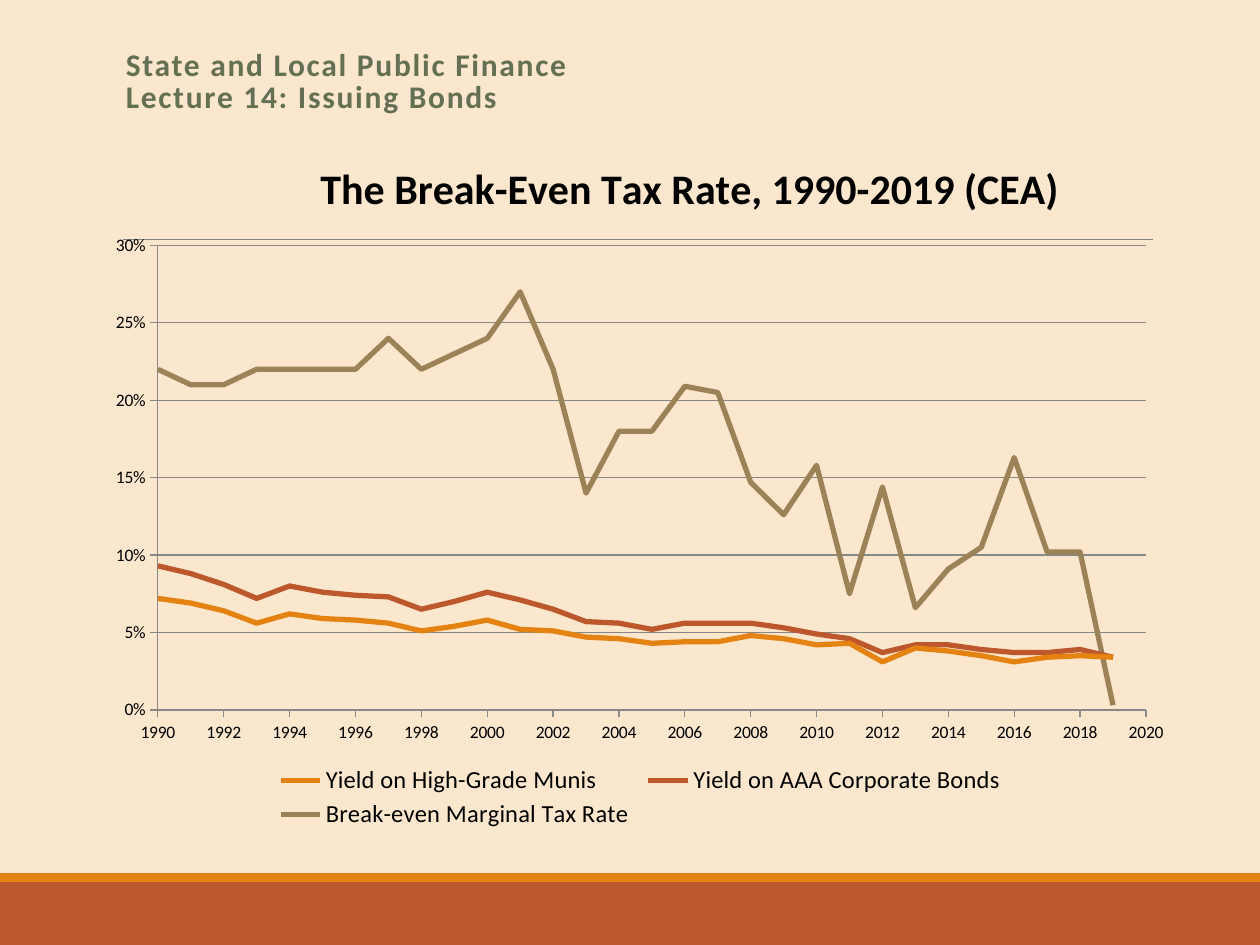
from dataclasses import dataclass

from lxml.etree import SubElement
from pptx import Presentation
from pptx.chart.data import XyChartData
from pptx.dml.color import RGBColor
from pptx.enum.chart import XL_CHART_TYPE, XL_LEGEND_POSITION, XL_TICK_MARK
from pptx.enum.shapes import MSO_CONNECTOR, MSO_SHAPE
from pptx.enum.text import MSO_ANCHOR
from pptx.oxml.ns import qn
from pptx.util import Pt


@dataclass(frozen=True)
class Theme:
    font: str = "Calibri"
    background: str = "FBE6CE"
    orange: str = "E48312"
    rust: str = "BD582C"
    tan: str = "9B8357"
    green: str = "637052"
    rule: str = "808080"
    axis: str = "878787"
    text: str = "000000"
    header_size: int = 18
    title_size: int = 24
    legend_size: int = 14
    axis_size: int = 10


THEME = Theme()
FIRST_YEAR = 1990
SERIES = [
    ("Yield on High-Grade Munis", THEME.orange, [
        0.072, 0.069, 0.064, 0.056, 0.062, 0.059, 0.058, 0.056, 0.051, 0.054,
        0.058, 0.052, 0.051, 0.047, 0.046, 0.043, 0.044, 0.044, 0.048, 0.046,
        0.042, 0.043, 0.031, 0.04, 0.038, 0.035, 0.031, 0.034, 0.035, 0.034]),
    ("Yield on AAA Corporate Bonds", THEME.rust, [
        0.093, 0.088, 0.081, 0.072, 0.08, 0.076, 0.074, 0.073, 0.065, 0.07,
        0.076, 0.071, 0.065, 0.057, 0.056, 0.052, 0.056, 0.056, 0.056, 0.053,
        0.049, 0.046, 0.037, 0.042, 0.042, 0.039, 0.037, 0.037, 0.039, 0.034]),
    ("Break-even Marginal Tax Rate", THEME.tan, [
        0.22, 0.21, 0.21, 0.22, 0.22, 0.22, 0.22, 0.24, 0.22, 0.23,
        0.24, 0.27, 0.22, 0.14, 0.18, 0.18, 0.209, 0.205, 0.147, 0.126,
        0.158, 0.075, 0.144, 0.066, 0.091, 0.105, 0.163, 0.102, 0.102, 0.003]),
]


def color(value):
    return RGBColor.from_string(value)


def format_font(font, size, fill=THEME.text, bold=False):
    font.name = THEME.font
    font.size = Pt(size)
    font.bold = bold
    font.color.rgb = color(fill)


def format_line(line, fill, width):
    line.color.rgb = color(fill)
    line.width = Pt(width)


def add_text(slide, text, left, top, width, height, *, size, fill,
             bold=False, line_spacing=1.0, letter_spacing=0):
    shape = slide.shapes.add_textbox(Pt(left), Pt(top), Pt(width), Pt(height))
    frame = shape.text_frame
    frame.word_wrap = True
    frame.vertical_anchor = MSO_ANCHOR.MIDDLE
    frame.text = text
    paragraph = frame.paragraphs[0]
    paragraph.line_spacing = line_spacing
    for run in paragraph.runs:
        format_font(run.font, size, fill, bold)
        run.font._element.set("spc", str(letter_spacing * 100))


def add_band(slide, top, height, fill):
    shape = slide.shapes.add_shape(
        MSO_SHAPE.RECTANGLE, Pt(0), Pt(top), Pt(720), Pt(height))
    shape.shadow.inherit = False
    shape.fill.solid()
    shape.fill.fore_color.rgb = color(fill)
    shape.line.fill.background()


def add_rule(slide, left, right, top):
    connector = slide.shapes.add_connector(
        MSO_CONNECTOR.STRAIGHT, Pt(left), Pt(top), Pt(right), Pt(top))
    format_line(connector.line, THEME.rule, 0.5)
    SubElement(connector._element.spPr, qn("a:effectLst"))


def place(element, index, **fractions):
    for existing in element.findall(qn("c:layout")):
        element.remove(existing)
    layout = SubElement(element, qn("c:layout"))
    element.insert(index, layout)
    manual = SubElement(layout, qn("c:manualLayout"))
    if element.tag == qn("c:plotArea"):
        SubElement(manual, qn("c:layoutTarget")).set("val", "inner")
    for mode in ("xMode", "yMode"):
        SubElement(manual, qn(f"c:{mode}")).set("val", "edge")
    for name, value in fractions.items():
        SubElement(manual, qn(f"c:{name}")).set("val", str(value))


def format_axis(axis, minimum, maximum, unit, number_format):
    axis.minimum_scale = minimum
    axis.maximum_scale = maximum
    axis.major_unit = unit
    axis.major_tick_mark = XL_TICK_MARK.OUTSIDE
    axis.minor_tick_mark = XL_TICK_MARK.NONE
    axis.tick_labels.number_format = number_format
    axis.tick_labels.number_format_is_linked = False
    format_font(axis.tick_labels.font, THEME.axis_size)
    format_line(axis.format.line, THEME.axis, 0.75)


def add_yield_chart(slide, left, top, width, height):
    data = XyChartData(number_format="0%")
    for name, _, values in SERIES:
        series = data.add_series(name)
        for year, value in enumerate(values, FIRST_YEAR):
            series.add_data_point(year, value)
    chart = slide.shapes.add_chart(
        XL_CHART_TYPE.XY_SCATTER_LINES_NO_MARKERS,
        Pt(left), Pt(top), Pt(width), Pt(height), data).chart
    format_font(chart.font, THEME.axis_size)
    for series, (_, fill, _) in zip(chart.plots[0].series, SERIES):
        format_line(series.format.line, fill, 3)
        series.smooth = False

    format_axis(chart.category_axis, FIRST_YEAR, 2020, 2, "General")
    format_axis(chart.value_axis, 0, 0.3, 0.05, "0%")
    chart.category_axis.has_major_gridlines = False
    chart.value_axis.has_major_gridlines = True
    format_line(chart.value_axis.major_gridlines.format.line, THEME.axis, 0.75)

    chart.has_title = True
    title = chart.chart_title
    title.text_frame.text = "The Break-Even Tax Rate, 1990-2019 (CEA)"
    format_font(title.text_frame.paragraphs[0].runs[0].font,
                THEME.title_size, bold=True)
    chart.has_legend = True
    chart.legend.position = XL_LEGEND_POSITION.BOTTOM
    chart.legend.include_in_layout = False
    format_font(chart.legend.font, THEME.legend_size)

    place(title._element, 1, x=0.2, y=0.04)
    place(chart.legend._element, 1, x=0.16, y=0.89, w=0.68, h=0.1)
    place(chart._chartSpace.chart.plotArea, 0, x=0.058, y=0.17, w=0.905, h=0.648)


def main():
    presentation = Presentation()
    presentation.slide_width = Pt(720)
    presentation.slide_height = Pt(540)
    slide = presentation.slides.add_slide(presentation.slide_layouts[6])
    slide.background.fill.solid()
    slide.background.fill.fore_color.rgb = color(THEME.background)
    add_band(slide, 504, 36, THEME.rust)
    add_band(slide, 499, 5, THEME.orange)
    add_rule(slide, 70.5, 659, 136.8)
    add_text(slide, "State and Local Public Finance\vLecture 14: Issuing Bonds",
             64.8, 23.8, 594, 46.8, size=THEME.header_size, fill=THEME.green,
             bold=True, line_spacing=0.85, letter_spacing=1)
    add_yield_chart(slide, 54, 70.6, 624, 409.7)
    presentation.save("out.pptx")


if __name__ == "__main__":
    main()
